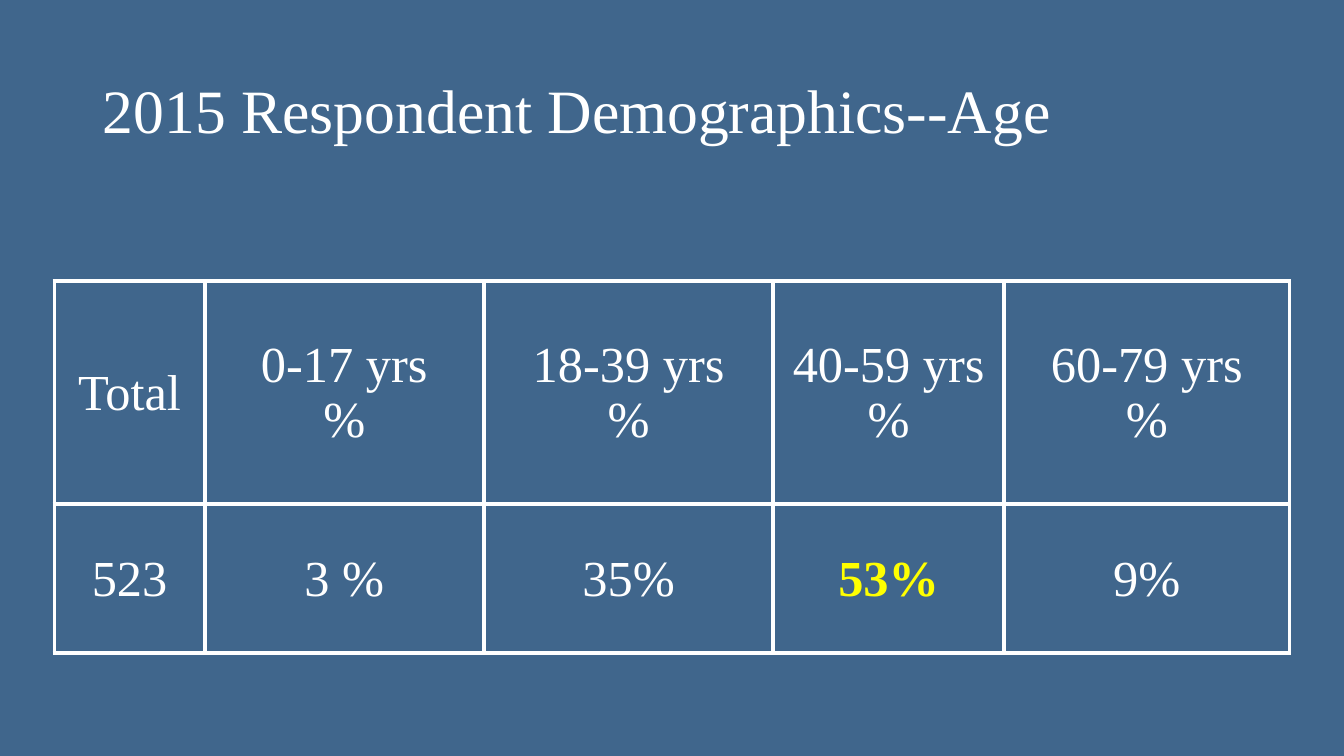
from lxml import etree
from pptx import Presentation
from pptx.dml.color import RGBColor
from pptx.enum.text import MSO_ANCHOR, PP_ALIGN
from pptx.oxml.ns import qn
from pptx.util import Inches, Pt

TITLE = "2015 Respondent Demographics--Age"
ROWS = [
    ["Total", "0-17 yrs\n%", "18-39 yrs\n%", "40-59 yrs\n%", "60-79 yrs\n%"],
    ["523", "3 %", "35%", "53%", "9%"],
]
HIGHLIGHT = "53%"
COLUMN_WIDTHS = [1.49, 2.77, 2.87, 2.29, 2.83]
ROW_HEIGHTS = [2.21, 1.48]
SPACE_AFTER = [0, 12]

FONT = "Times New Roman"
BLUE = RGBColor(0x40, 0x66, 0x8C)
WHITE = RGBColor(0xFF, 0xFF, 0xFF)
YELLOW = RGBColor(0xFF, 0xFF, 0x00)
MIDDLE = MSO_ANCHOR.MIDDLE
LEFT = PP_ALIGN.LEFT
CENTER = PP_ALIGN.CENTER


def style_font(font, size, color, bold=False):
    font.name = FONT
    font.size = Pt(size)
    font.bold = bold
    font.color.rgb = color


def add_borders(cell, color, width):
    properties = cell._tc.get_or_add_tcPr()
    for side in ("a:lnL", "a:lnR", "a:lnT", "a:lnB"):
        line = etree.SubElement(properties, qn(side), w=str(Pt(width)))
        fill = etree.SubElement(line, qn("a:solidFill"))
        etree.SubElement(fill, qn("a:srgbClr"), val=str(color))


def fill_cell(cell, text, space_after):
    add_borders(cell, WHITE, 3)
    cell.fill.background()
    cell.vertical_anchor = MIDDLE
    cell.margin_left = cell.margin_right = cell.margin_top = Inches(0.01)
    cell.margin_bottom = 0
    cell.text = text
    highlighted = text == HIGHLIGHT
    for paragraph in cell.text_frame.paragraphs:
        paragraph.alignment = CENTER
        paragraph.space_after = Pt(space_after)
        style_font(paragraph.font, 36, YELLOW if highlighted else WHITE, highlighted)


def add_title(slide):
    title = slide.shapes.title
    title.left, title.top = Inches(0.92), Inches(0.4)
    title.width, title.height = Inches(11.5), Inches(1.45)
    title.text_frame.text = TITLE
    title.text_frame.vertical_anchor = MIDDLE
    paragraph = title.text_frame.paragraphs[0]
    paragraph.alignment = LEFT
    paragraph.line_spacing = 0.9
    style_font(paragraph.font, 44, WHITE)


def add_age_table(slide):
    frame = slide.shapes.add_table(
        len(ROWS), len(COLUMN_WIDTHS), Inches(0.54), Inches(2.79),
        Inches(sum(COLUMN_WIDTHS)), Inches(sum(ROW_HEIGHTS)))
    table = frame.table
    table.first_row = False
    table.horz_banding = False
    for column, width in zip(table.columns, COLUMN_WIDTHS):
        column.width = Inches(width)
    for row, height, texts, space_after in zip(table.rows, ROW_HEIGHTS, ROWS, SPACE_AFTER):
        row.height = Inches(height)
        for cell, text in zip(row.cells, texts):
            fill_cell(cell, text, space_after)


def main():
    presentation = Presentation()
    presentation.slide_width = Inches(13.33)
    presentation.slide_height = Inches(7.5)
    slide = presentation.slides.add_slide(presentation.slide_layouts.get_by_name("Title Only"))
    slide.background.fill.solid()
    slide.background.fill.fore_color.rgb = BLUE
    add_title(slide)
    add_age_table(slide)
    presentation.save("out.pptx")


if __name__ == "__main__":
    main()
